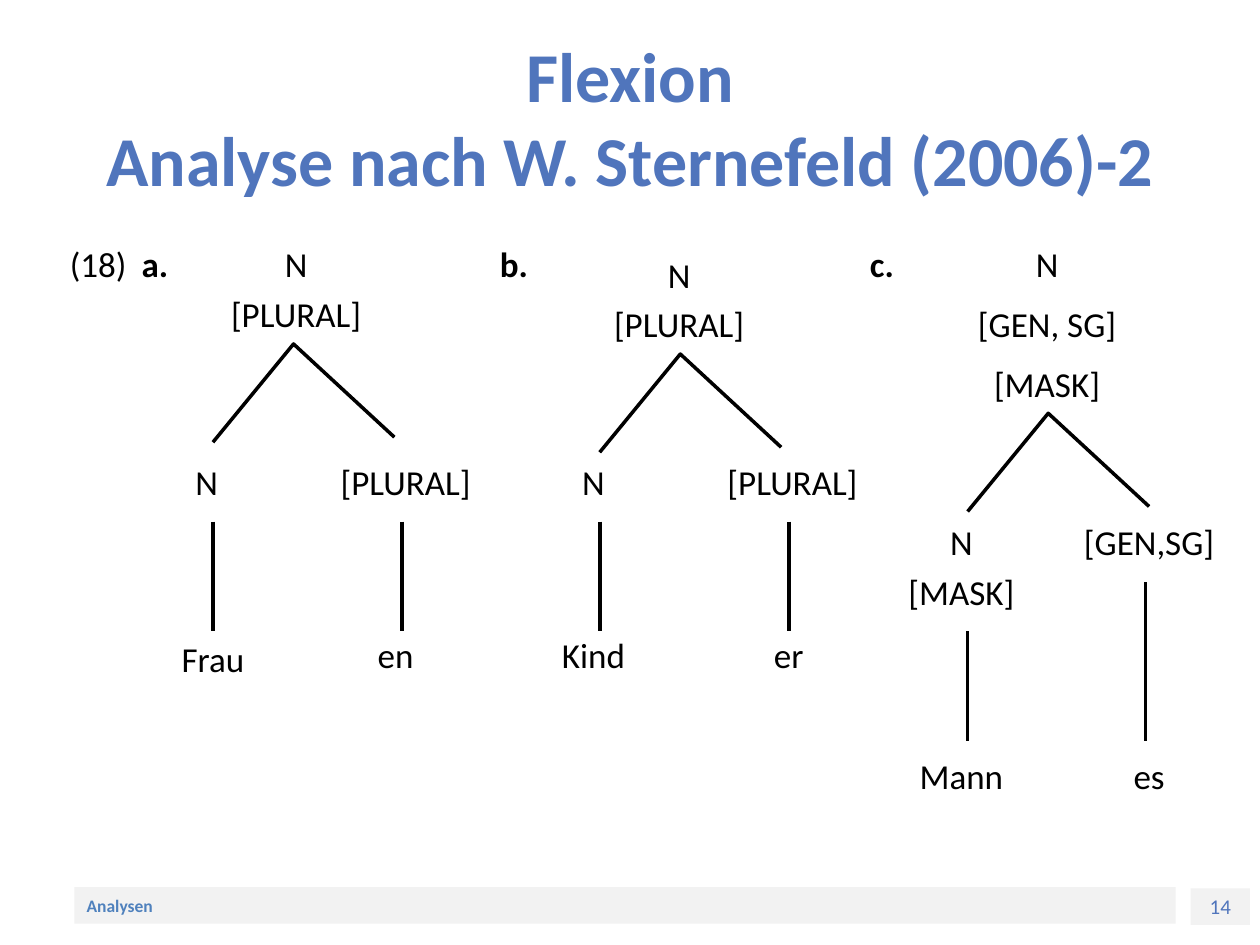
from lxml import etree
from pptx import Presentation
from pptx.dml.color import RGBColor
from pptx.enum.shapes import MSO_CONNECTOR as CONNECTOR, MSO_SHAPE as SHAPE
from pptx.enum.text import MSO_ANCHOR as ANCHOR, PP_ALIGN as ALIGN
from pptx.oxml.ns import qn
from pptx.util import Inches, Pt


def color(hex_code):
    return RGBColor.from_string(hex_code)


def add_text(text, left, top, width, height, size=20, hex_code="000000", bold=False,
             align=ALIGN.CENTER, margin=0, fill=None):
    box = (Inches(left), Inches(top), Inches(width), Inches(height))
    if fill:
        shape = slide.shapes.add_shape(SHAPE.RECTANGLE, *box)
        shape.shadow.inherit = False
        shape.fill.solid()
        shape.fill.fore_color.rgb = color(fill)
        shape.line.fill.background()
    else:
        shape = slide.shapes.add_textbox(*box)
    frame = shape.text_frame
    frame.word_wrap = True
    frame.margin_left = frame.margin_right = Inches(margin)
    frame.vertical_anchor = ANCHOR.MIDDLE
    paragraph = frame.paragraphs[0]
    paragraph.text = text
    paragraph.alignment = align
    for run in paragraph.runs:
        run.font.name = "Calibri"
        run.font.size = Pt(size)
        run.font.bold = bold
        run.font.color.rgb = color(hex_code)


presentation = Presentation()
presentation.slide_width = Inches(10)
presentation.slide_height = Inches(7.5)
slide = presentation.slides.add_slide(presentation.slide_layouts[6])

# Footer and title (\v is a line break inside the paragraph)
add_text("14", 9.45, 7.05, 0.47, 0.29, size=12, hex_code="5075BC", fill="F2F2F2")
add_text("Analysen", 0.59, 7.04, 8.74, 0.29, size=10, hex_code="4F81BD", bold=True,
         align=ALIGN.LEFT, margin=0.1, fill="F2F2F2")
add_text("Flexion\vAnalyse nach W. Sternefeld (2006)-2", 0.5, 0.3, 9, 1.25,
         size=40, hex_code="5075BC", bold=True, margin=0.1)

# Example number and letters
add_text("(18)", 0.28, 1.86, 1, 0.47)
for letter, left in (("a.", 0.73), ("b.", 3.58), ("c.", 6.5)):
    add_text(letter, left, 1.86, 1, 0.47, bold=True)

# Each tree: x of the left stem, labels as (text, center x, top, height),
# y of the apex, and stems as (x offset, top, bottom)
label_width = 1.12
trees = [
    (1.69,
     [("N", 2.35, 1.86, 0.47), ("[PLURAL]", 2.35, 2.25, 0.47),
      ("N", 1.64, 3.59, 0.47), ("[PLURAL]", 3.22, 3.59, 0.47),
      ("Frau", 1.69, 4.9, 0.66), ("en", 3.14, 4.9, 0.59)],
     2.73, [(0, 4.14, 5.01), (1.5, 4.14, 5.01)]),
    (4.76,
     [("N", 5.39, 1.94, 0.47), ("[PLURAL]", 5.39, 2.33, 0.47),
      ("N", 4.71, 3.59, 0.47), ("[PLURAL]", 6.29, 3.59, 0.47),
      ("Kind", 4.71, 4.9, 0.59), ("er", 6.26, 4.9, 0.59)],
     2.81, [(0, 4.14, 5.01), (1.5, 4.14, 5.01)]),
    (7.68,
     [("N", 8.31, 1.86, 0.47), ("[GEN, SG]", 8.31, 2.33, 0.47),
      ("[MASK]", 8.31, 2.81, 0.47), ("N", 7.63, 4.06, 0.47),
      ("[MASK]", 7.63, 4.46, 0.47), ("[GEN,SG]", 9.12, 4.06, 0.47),
      ("Mann", 7.63, 5.88, 0.55), ("es", 9.12, 5.8, 0.71)],
     3.28, [(0, 5.01, 5.88), (1.41, 4.62, 5.88)]),
]

for tree_x, labels, apex_y, stems in trees:
    for text, center_x, top, height in labels:
        add_text(text, center_x - label_width / 2, top, label_width, height)

    # Stems down to the word forms
    for offset, top, bottom in stems:
        x = Inches(tree_x + offset)
        stem = slide.shapes.add_connector(CONNECTOR.STRAIGHT, x, Inches(top), x, Inches(bottom))
        stem.line.color.rgb = color("000000")
        stem.line.width = Pt(2)
        etree.SubElement(stem._element.spPr, qn("a:effectLst"))

    # Branches from the apex to both daughters
    builder = slide.shapes.build_freeform(Inches(tree_x), Inches(apex_y + 0.78))
    builder.add_line_segments([(Inches(tree_x + 0.64), Inches(apex_y)),
                               (Inches(tree_x + 1.44), Inches(apex_y + 0.74))], close=False)
    branches = builder.convert_to_shape()
    branches.shadow.inherit = False
    branches.fill.background()
    branches.line.color.rgb = color("000000")
    branches.line.width = Pt(2)

presentation.save("out.pptx")
